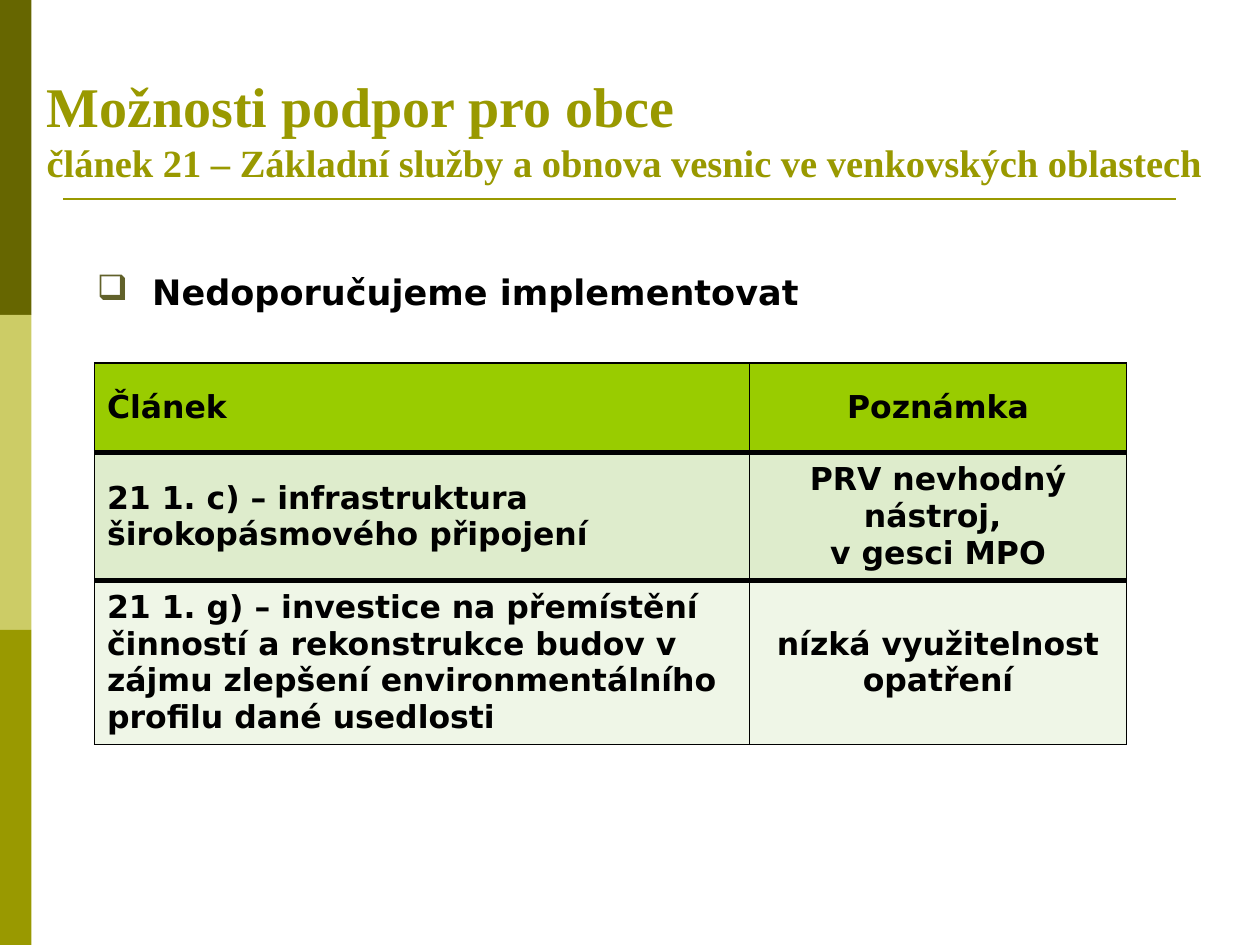
from lxml.etree import SubElement
from pptx import Presentation
from pptx.dml.color import RGBColor
from pptx.enum.shapes import MSO_CONNECTOR as Connector, MSO_SHAPE as Shape
from pptx.enum.text import MSO_ANCHOR as Anchor, MSO_AUTO_SIZE as AutoSize, PP_ALIGN as Align
from pptx.oxml.ns import qn
from pptx.util import Inches, Pt

WIDTH, HEIGHT = 10, 7.5
COLORS = {
    "dark": "666600", "light": "CCCC66", "olive": "999900",
    "header": "99CC00", "even": "DEECCC", "odd": "EFF6E7",
    "bullet": "61612A", "black": "000000",
}
HEADING_FONT, BODY_FONT = "Times New Roman", "DejaVu Sans"
COLUMNS = (5.2, 2.99)
THIN, THICK = 1, 3
ROWS = (
    (0.71, "header", ("Článek", "Poznámka")),
    (1.02, "even", ("21 1. c) – infrastruktura širokopásmového připojení",
                    "PRV nevhodný nástroj, \nv gesci MPO")),
    (1.26, "odd", ("21 1. g) – investice na přemístění činností a rekonstrukce budov "
                   "v zájmu zlepšení environmentálního profilu dané usedlosti",
                   "nízká využitelnost opatření")),
)


def rgb(name):
    """Return the named colour."""
    return RGBColor.from_string(COLORS[name])


def add_text(paragraph, text, size, font, color):
    """Add bold runs, one for each line of the text."""
    for index, line in enumerate(text.split("\n")):
        if index:
            paragraph.add_line_break()
        run = paragraph.add_run()
        run.text = line
        run.font.size, run.font.bold, run.font.name = Pt(size), True, font
        run.font.color.rgb = rgb(color)


def add_side_band(slide):
    """Stack three equal colour blocks along the left edge."""
    block_height = HEIGHT / 3
    for index, color in enumerate(("dark", "light", "olive")):
        block = slide.shapes.add_shape(
            Shape.RECTANGLE, 0, Inches(index * block_height),
            Inches(WIDTH / 40), Inches(block_height))
        block.shadow.inherit = False
        block.fill.solid()
        block.fill.fore_color.rgb = rgb(color)
        block.line.fill.background()


def add_title_rule(slide):
    """Draw the rule under the title."""
    rule = slide.shapes.add_connector(
        Connector.STRAIGHT, Inches(0.5), Inches(1.58), Inches(9.33), Inches(1.58))
    rule.line.color.rgb = rgb("olive")
    rule.line.width = Pt(1.5)
    SubElement(rule._element.spPr, qn("a:effectLst"))


def fill_title(slide):
    """Place the two-line title on the title placeholder."""
    title = slide.shapes.title
    title.left, title.top = Inches(0.27), Inches(0.52)
    title.width, title.height = Inches(9.73), Inches(1.16)
    frame = title.text_frame
    frame.auto_size, frame.word_wrap = AutoSize.NONE, True
    frame.vertical_anchor = Anchor.BOTTOM
    frame.margin_bottom = Inches(0.21)
    heading = frame.paragraphs[0]
    heading.alignment = Align.LEFT
    add_text(heading, "Možnosti podpor pro obce", 32, HEADING_FONT, "olive")
    heading.add_line_break()
    add_text(heading, "článek 21 – Základní služby a obnova vesnic ve venkovských oblastech",
             22, HEADING_FONT, "olive")


def add_bullet_line(slide):
    """Add the bulleted recommendation above the table."""
    box = slide.shapes.add_textbox(Inches(0.67), Inches(2.1), Inches(6.54), Inches(0.44))
    box.text_frame.word_wrap = True
    advice = box.text_frame.paragraphs[0]
    advice.alignment, advice.space_before = Align.JUSTIFY, Pt(12)
    add_text(advice, "Nedoporučujeme implementovat", 20, BODY_FONT, "black")
    properties = advice._p.get_or_add_pPr()
    properties.set("marL", str(Inches(0.44)))
    properties.set("indent", str(-Inches(0.44)))
    bullet_color = SubElement(properties, qn("a:buClr"))
    SubElement(bullet_color, qn("a:srgbClr"), val=COLORS["bullet"])
    SubElement(properties, qn("a:buChar"), char="❑")


def set_borders(cell, top, bottom):
    """Draw black cell borders, thin at the sides."""
    properties = cell._tc.get_or_add_tcPr()
    for side, width in (("L", THIN), ("R", THIN), ("T", top), ("B", bottom)):
        border = SubElement(properties, qn(f"a:ln{side}"), w=str(Pt(width)))
        fill = SubElement(border, qn("a:solidFill"))
        SubElement(fill, qn("a:srgbClr"), val=COLORS["black"])


def add_articles_table(slide):
    """Add the table of articles and notes."""
    heights = [height for height, _, _ in ROWS]
    table = slide.shapes.add_table(
        len(ROWS), len(COLUMNS), Inches(0.75), Inches(2.88),
        Inches(sum(COLUMNS)), Inches(sum(heights))).table
    for column, width in zip(table.columns, COLUMNS):
        column.width = Inches(width)
    last = len(ROWS) - 1
    for row, (height, color, texts) in enumerate(ROWS):
        table.rows[row].height = Inches(height)
        for column, text in enumerate(texts):
            cell = table.cell(row, column)
            set_borders(cell, THICK if row else THIN, THIN if row == last else THICK)
            cell.fill.solid()
            cell.fill.fore_color.rgb = rgb(color)
            cell.vertical_anchor = Anchor.MIDDLE
            if row and column:
                cell.margin_left = cell.margin_right = Inches(0.07)
                cell.margin_top = cell.margin_bottom = 0
            paragraph = cell.text_frame.paragraphs[0]
            paragraph.alignment = Align.CENTER if column else Align.LEFT
            add_text(paragraph, text, 18, BODY_FONT, "black")


def main():
    """Build and save the slide."""
    deck = Presentation()
    deck.slide_width, deck.slide_height = Inches(WIDTH), Inches(HEIGHT)
    slide = deck.slides.add_slide(deck.slide_layouts[5])
    add_side_band(slide)
    add_title_rule(slide)
    fill_title(slide)
    add_bullet_line(slide)
    add_articles_table(slide)
    deck.save("out.pptx")


if __name__ == "__main__":
    main()
